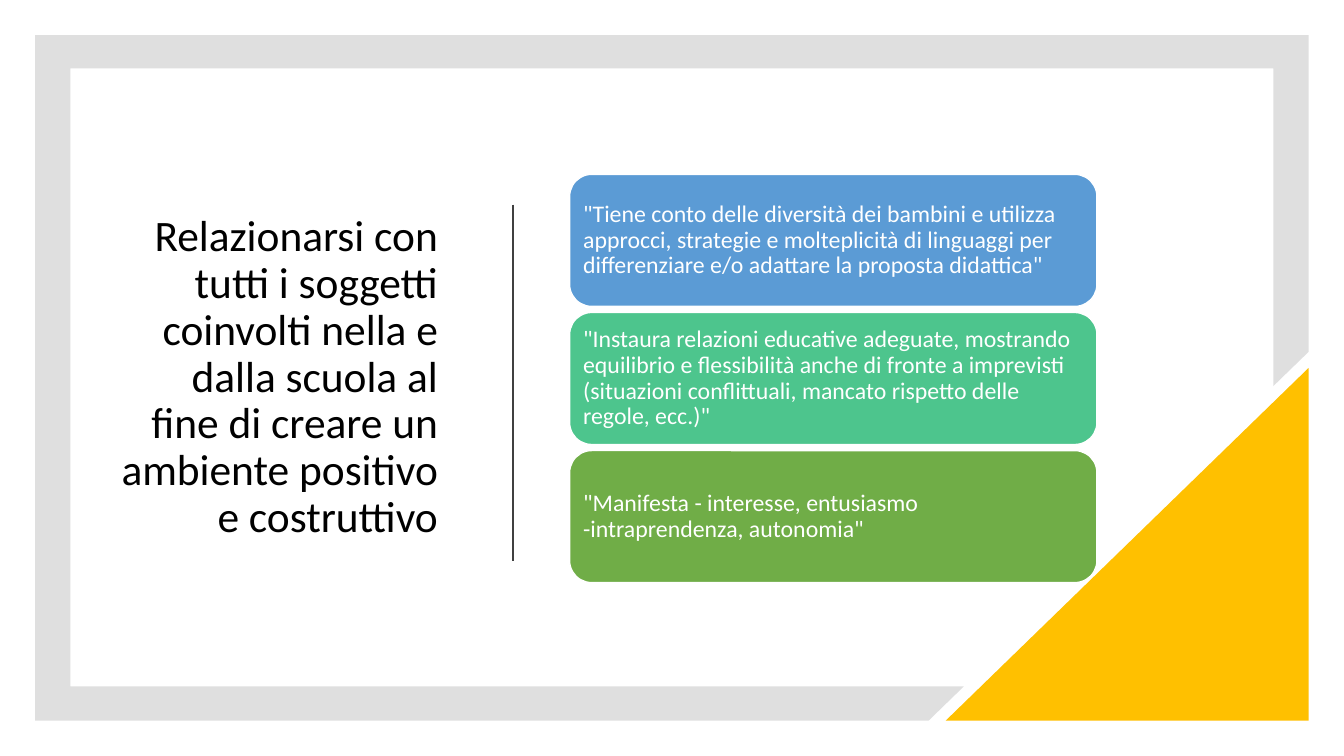
from dataclasses import dataclass

from lxml import etree
from pptx import Presentation
from pptx.dml.color import RGBColor
from pptx.enum import shapes, text
from pptx.oxml.ns import qn
from pptx.util import Inches, Pt

TITLE = ("Relazionarsi con tutti i soggetti coinvolti nella e dalla scuola "
         "al fine di creare un ambiente positivo e costruttivo")
CARDS = [
    ("5B9BD5", '"Tiene conto delle diversità dei bambini e utilizza approcci, strategie '
               'e molteplicità di linguaggi per differenziare e/o adattare la proposta didattica"'),
    ("4DC58D", '"Instaura relazioni educative adeguate, mostrando equilibrio e flessibilità '
               'anche di fronte a imprevisti (situazioni conflittuali, mancato rispetto '
               'delle regole, ecc.)"'),
    ("70AD47", '"Manifesta - interesse, entusiasmo -intraprendenza, autonomia"'),
]


@dataclass(frozen=True)
class Theme:
    font: str = "Calibri"
    title_size: int = 31
    card_size: int = 17
    ink: str = "000000"
    paper: str = "FFFFFF"
    frame: str = "808080"
    frame_alpha: int = 25
    corner: str = "FFC000"
    rule: str = "404040"


THEME = Theme()
WIDTH, HEIGHT = 13.33, 7.5

# Frame: outer margin, band thickness, and the cut left by the corner triangle
MARGIN, BAND_X, BAND_Y = 0.35, 0.35, 0.33
CUT_X, CUT_Y = 9.21, 3.49
TRIANGLE_W, TRIANGLE_H = 3.6, 3.5

# Content: one title column, a rule, one column of cards
TITLE_BOX = (1.1, 1.3, 3.34, 4.9)
RULE_X, RULE_TOP, RULE_BOTTOM = 5.09, 2.03, 5.57
CARD_X, CARD_TOP, CARD_W, CARD_H, CARD_GAP = 5.65, 1.73, 5.23, 1.31, 0.06


def paint(shape, fill, line=None):
    shape.shadow.inherit = False
    shape.fill.solid()
    shape.fill.fore_color.rgb = RGBColor.from_string(fill)
    if line:
        shape.line.color.rgb = RGBColor.from_string(line)
        shape.line.width = Pt(1)
    else:
        shape.line.fill.background()


def write(shape, words, size, color, align, inset):
    frame = shape.text_frame
    layout = {"word_wrap": True, "vertical_anchor": text.MSO_ANCHOR.MIDDLE}
    layout.update({f"margin_{side}": Inches(inset)
                   for side in ("left", "top", "right", "bottom")})
    para = frame.paragraphs[0]
    span = para.add_run()
    span.text = words
    formats = [(frame, layout),
               (para, {"alignment": align, "line_spacing": 0.9}),
               (span.font, {"name": THEME.font, "size": Pt(size)})]
    for target, values in formats:
        for name, value in values.items():
            setattr(target, name, value)
    span.font.color.rgb = RGBColor.from_string(color)


def add_frame(page):
    right, bottom = WIDTH - MARGIN, HEIGHT - MARGIN
    left_in, top_in = MARGIN + BAND_X, MARGIN + BAND_Y
    right_in, bottom_in = right - BAND_X, bottom - BAND_Y - 0.01
    outline = [(MARGIN, MARGIN), (right, MARGIN), (right, CUT_Y),
               (right_in, CUT_Y + 0.34), (right_in, top_in), (left_in, top_in),
               (left_in, bottom_in), (CUT_X + 0.35, bottom_in),
               (CUT_X, bottom), (MARGIN, bottom)]
    points = [(round(x * 100), round(y * 100)) for x, y in outline]
    builder = page.shapes.build_freeform(*points[0], scale=Inches(0.01))
    builder.add_line_segments(points[1:], close=True)
    band = builder.convert_to_shape()
    paint(band, THEME.frame)
    color = next(band.element.spPr.iter(qn("a:srgbClr")))
    etree.SubElement(color, qn("a:alpha"), val=str(THEME.frame_alpha * 1000))


def add_corner(page):
    corner = page.shapes.add_shape(
        shapes.MSO_SHAPE.RIGHT_TRIANGLE,
        Inches(WIDTH - MARGIN - TRIANGLE_W), Inches(HEIGHT - MARGIN - TRIANGLE_H),
        Inches(TRIANGLE_W), Inches(TRIANGLE_H))
    corner.element.spPr.find(qn("a:xfrm")).set("flipH", "1")
    paint(corner, THEME.corner)


def add_rule(page):
    rule = page.shapes.add_connector(
        shapes.MSO_CONNECTOR.STRAIGHT, Inches(RULE_X), Inches(RULE_TOP),
        Inches(RULE_X), Inches(RULE_BOTTOM))
    rule.line.color.rgb = RGBColor.from_string(THEME.rule)
    rule.line.width = Pt(1.5)
    etree.SubElement(rule.element.spPr, qn("a:effectLst"))


def add_cards(page):
    for row, (fill, words) in enumerate(CARDS):
        top = CARD_TOP + row * (CARD_H + CARD_GAP)
        card = page.shapes.add_shape(
            shapes.MSO_SHAPE.ROUNDED_RECTANGLE,
            *map(Inches, (CARD_X, top, CARD_W, CARD_H)))
        paint(card, fill, THEME.paper)
        write(card, words, THEME.card_size, THEME.paper, text.PP_ALIGN.LEFT, 0.07)


def main():
    deck = Presentation()
    deck.slide_width, deck.slide_height = Inches(WIDTH), Inches(HEIGHT)
    page = deck.slides.add_slide(deck.slide_layouts[6])
    add_frame(page)
    add_corner(page)
    title = page.shapes.add_textbox(*map(Inches, TITLE_BOX))
    write(title, TITLE, THEME.title_size, THEME.ink, text.PP_ALIGN.RIGHT, 0.1)
    add_rule(page)
    add_cards(page)
    deck.save("out.pptx")


if __name__ == "__main__":
    main()
